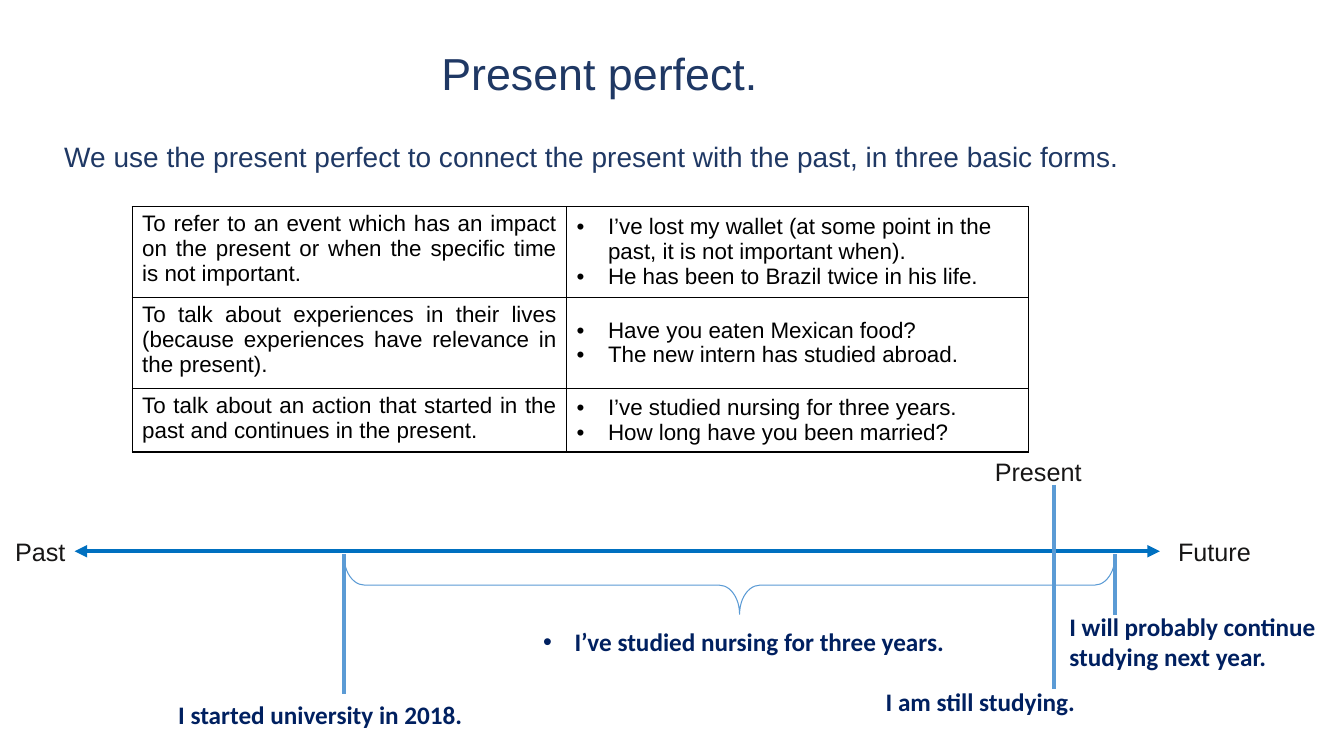
"""Builds a slide on the present perfect with a usage table and a timeline."""
from lxml import etree
from pptx import Presentation
from pptx.dml.color import RGBColor
from pptx.enum.shapes import MSO_CONNECTOR, MSO_SHAPE
from pptx.enum.text import MSO_ANCHOR, MSO_AUTO_SIZE, PP_ALIGN
from pptx.oxml import parse_xml
from pptx.oxml.ns import nsdecls, qn
from pptx.util import Cm, Pt

STRAIGHT = MSO_CONNECTOR.STRAIGHT
BRACE = MSO_SHAPE.RIGHT_BRACE
LEFT, CENTER, JUSTIFY = PP_ALIGN.LEFT, PP_ALIGN.CENTER, PP_ALIGN.JUSTIFY
MIDDLE = MSO_ANCHOR.MIDDLE
GROW = MSO_AUTO_SIZE.SHAPE_TO_FIT_TEXT

NURSING = "I’ve studied nursing for three years."
USES = [
    ("To refer to an event which has an impact on the present or when "
     "the specific time is not important.",
     ["I’ve lost my wallet (at some point in the past, it is not important when).",
      "He has been to Brazil twice in his life."]),
    ("To talk about experiences in their lives (because experiences have "
     "relevance in the present).",
     ["Have you eaten Mexican food?", "The new intern has studied abroad."]),
    ("To talk about an action that started in the past and continues in the present.",
     [NURSING, "How long have you been married?"]),
]
AXIS_Y = 13.89
TICK_TOP = 13.97
START_X, PRESENT_X, NEXT_X = 8.66, 26.57, 28.09


def color(value):
    return RGBColor.from_string(value)


def write(frame, *lines, size=18, font="Arial", ink="171616", bold=False,
          align=LEFT, bullet=False):
    for index, line in enumerate(lines):
        paragraph = frame.paragraphs[0] if index == 0 else frame.add_paragraph()
        paragraph.alignment = align
        span = paragraph.add_run()
        span.text = line
        span.font.size = Pt(size)
        span.font.name = font
        span.font.bold = bold
        span.font.color.rgb = color(ink)
        if bullet:
            properties = paragraph._p.get_or_add_pPr()
            properties.set("marL", str(Cm(0.79)))
            properties.set("indent", str(-Cm(0.79)))
            etree.SubElement(properties, qn("a:buFont")).set("typeface", "Arial")
            etree.SubElement(properties, qn("a:buChar")).set("char", "•")


class Lesson:
    """Holds the current page and the style of its elements."""
    navy = "1F3864"
    note = {"font": "Calibri", "ink": "002060", "bold": True}
    axis = "0070C0"
    mark = "5B9BD5"

    def __init__(self, page):
        self.page = page

    def text(self, left, top, width, height, line, **style):
        box = self.page.shapes.add_textbox(Cm(left), Cm(top), Cm(width), Cm(height))
        box.text_frame.word_wrap = True
        box.text_frame.auto_size = GROW
        write(box.text_frame, line, **style)

    def line(self, start, end, ink, arrows=False):
        line = self.page.shapes.add_connector(STRAIGHT, *map(Cm, start + end))
        line.line.color.rgb = color(ink)
        line.line.width = Pt(3)
        etree.SubElement(line._element.spPr, qn("a:effectLst"))
        if arrows:
            for name in ("a:headEnd", "a:tailEnd"):
                etree.SubElement(line.line._get_or_add_ln(), qn(name)).set("type", "triangle")

    def brace(self, left, top, width, height, *adjustments):
        brace = self.page.shapes.add_shape(BRACE, Cm(left), Cm(top), Cm(width), Cm(height))
        brace.rotation = 90
        brace.shadow.inherit = False
        brace.fill.background()
        brace.line.color.rgb = color(self.mark)
        brace.line.width = Pt(0.75)
        for index, value in enumerate(adjustments):
            brace.adjustments[index] = value

    def border(self, cell):
        for side in ("lnL", "lnR", "lnT", "lnB"):
            cell._tc.get_or_add_tcPr().append(parse_xml(
                f'<a:{side} {nsdecls("a")} w="{Pt(1)}"><a:solidFill>'
                f'<a:srgbClr val="000000"/></a:solidFill></a:{side}>'))
        cell.fill.background()

    def table(self, left, top, widths, heights, uses):
        table = self.page.shapes.add_table(
            len(heights), len(widths), Cm(left), Cm(top),
            Cm(sum(widths)), Cm(sum(heights))).table
        table.first_row = table.horz_banding = False
        for column, width in zip(table.columns, widths):
            column.width = Cm(width)
        for row, height, (use, examples) in zip(table.rows, heights, uses):
            row.height = Cm(height)
            use_cell, example_cell = row.cells
            write(use_cell.text_frame, use, size=16, ink="000000", align=JUSTIFY)
            write(example_cell.text_frame, *examples, size=16, ink="000000", bullet=True)
            example_cell.vertical_anchor = MIDDLE
            for cell in row.cells:
                self.border(cell)


def main():
    deck = Presentation()
    deck.slide_width, deck.slide_height = Cm(33.87), Cm(19.05)
    lesson = Lesson(deck.slides.add_slide(deck.slide_layouts[6]))

    lesson.text(-0.69, 1.04, 31.6, 1.63, "Present perfect.",
                size=32, ink=lesson.navy, align=CENTER)
    lesson.text(1.37, 3.38, 30.18, 1.12,
                "We use the present perfect to connect the present with the past, "
                "in three basic forms.", size=20, ink=lesson.navy, align=JUSTIFY)
    lesson.table(3.33, 5.21, [10.95, 11.63], [2.28, 2.28, 1.61], USES)

    lesson.line((1.88, AXIS_Y), (29.23, AXIS_Y), lesson.axis, arrows=True)
    for x, top, bottom in [(PRESENT_X, 12.22, AXIS_Y), (PRESENT_X, AXIS_Y, 17.37),
                           (START_X, TICK_TOP, 17.48), (NEXT_X, TICK_TOP, 15.49)]:
        lesson.line((x, top), (x, bottom), lesson.mark)
    lesson.brace(17.65, 5.03, 1.47, 19.43, 0.351, 0.487)

    for left, top, width, label in [(24.82, 11.38, 2.85, "Present"),
                                    (29.44, 13.39, 2.46, "Future"),
                                    (0.13, 13.39, 1.88, "Past")]:
        lesson.text(left, top, width, 1.02, label)
    lesson.text(13.44, 15.67, 10.85, 1.02, NURSING, bullet=True, **lesson.note)
    for left, top, width, height, label in [
            (4.24, 17.5, 8.26, 1.02, "I started university in 2018."),
            (22.07, 17.17, 5.84, 1.02, "I am still studying."),
            (26.7, 15.27, 6.91, 1.8, "I will probably continue studying next year.")]:
        lesson.text(left, top, width, height, label, **lesson.note)

    deck.save("out.pptx")


if __name__ == "__main__":
    main()
